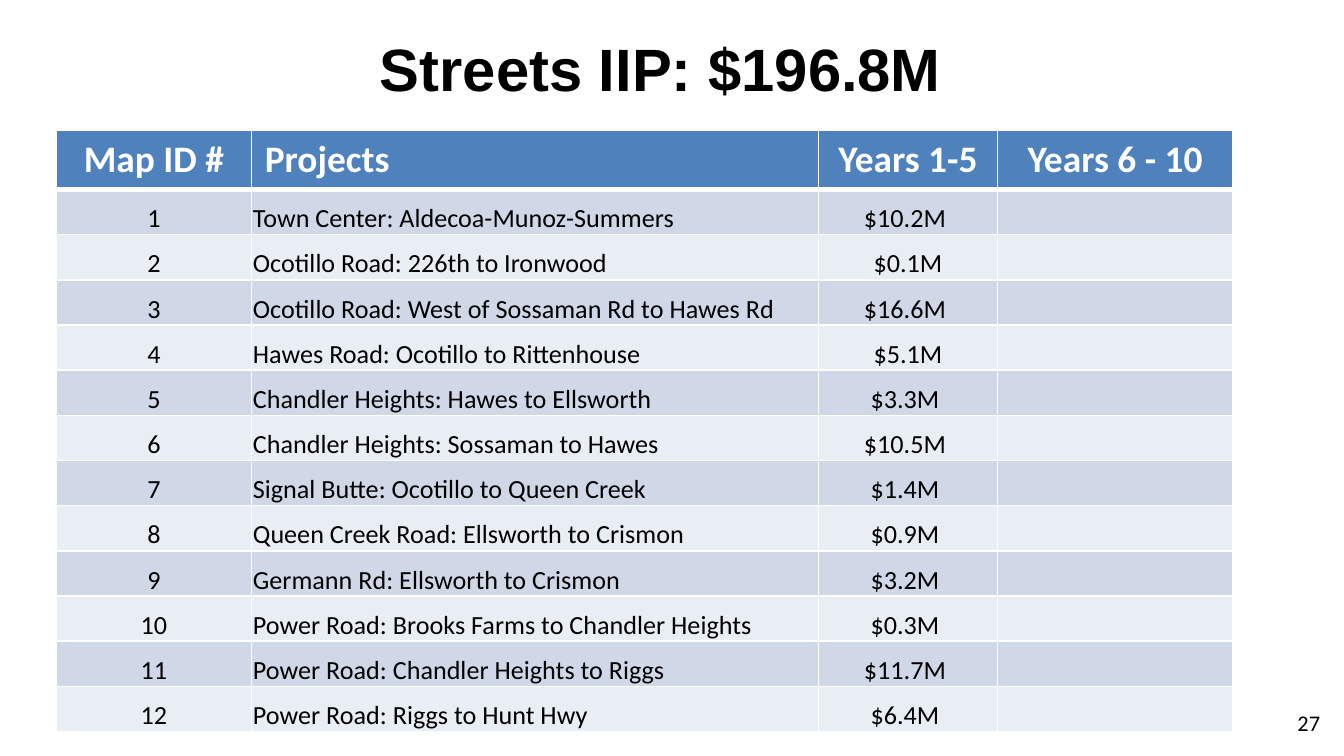
from lxml import etree
from pptx import Presentation
from pptx.dml.color import RGBColor
from pptx.enum import text
from pptx.oxml import ns
from pptx.util import Cm, Pt

TITLE = "Streets IIP: $196.8M"
PAGE = "27"
HEADER = ("Map ID #", "Projects", "Years 1-5", "Years 6 - 10")
PROJECTS = [
    ("Town Center: Aldecoa-Munoz-Summers", "$10.2M "),
    ("Ocotillo Road: 226th to Ironwood", "$0.1M"),
    ("Ocotillo Road: West of Sossaman Rd to Hawes Rd", "$16.6M "),
    ("Hawes Road: Ocotillo to Rittenhouse", "$5.1M"),
    ("Chandler Heights: Hawes to Ellsworth", "$3.3M "),
    ("Chandler Heights: Sossaman to Hawes", "$10.5M "),
    ("Signal Butte: Ocotillo to Queen Creek", "$1.4M "),
    ("Queen Creek Road: Ellsworth to Crismon", "$0.9M "),
    ("Germann Rd: Ellsworth to Crismon", "$3.2M "),
    ("Power Road: Brooks Farms to Chandler Heights", "$0.3M "),
    ("Power Road: Chandler Heights to Riggs", "$11.7M "),
    ("Power Road: Riggs to Hunt Hwy", "$6.4M "),
]
ROWS = [HEADER] + [(str(i), name, cost, "")
                   for i, (name, cost) in enumerate(PROJECTS, 1)]

LEFT, CENTER, RIGHT = (text.PP_ALIGN.LEFT, text.PP_ALIGN.CENTER,
                       text.PP_ALIGN.RIGHT)
ALIGN = (CENTER, LEFT, CENTER, CENTER)
COLUMNS = (3.68, 10.72, 3.38, 4.45)
TABLE_LEFT, TABLE_TOP, TABLE_HEIGHT, HEADER_HEIGHT = 1.07, 2.46, 11.37, 1.12

THEME = {
    "title": {"name": "Arial", "size": Pt(32), "bold": True, "color": "000000"},
    "header": {"name": "Calibri", "size": Pt(20), "bold": True, "color": "FFFFFF"},
    "body": {"name": "Calibri", "size": Pt(14), "bold": False, "color": "000000"},
    "page": {"name": "Calibri", "size": Pt(12), "bold": False, "color": "000000"},
    "header_fill": "4F81BD",
    "bands": ("D0D8E8", "E9EDF4"),
    "border": "FFFFFF",
}
BODY_CELL = {"margin_left": Cm(0.03), "margin_right": Cm(0.03),
             "margin_top": Cm(0.03), "margin_bottom": 0,
             "vertical_anchor": text.MSO_ANCHOR.BOTTOM}


def set_attrs(target, values):
    for name, value in values.items():
        setattr(target, name, value)


def write(tf, words, style, align):
    p = tf.paragraphs[0]
    p.alignment = align
    if not words:
        return
    r = p.add_run()
    r.text = words
    set_attrs(r.font, {k: v for k, v in THEME[style].items() if k != "color"})
    r.font.color.rgb = RGBColor.from_string(THEME[style]["color"])


def set_borders(cell, widths):
    """Put the side lines ahead of the fill, as the schema asks."""
    tc_pr = cell._tc.get_or_add_tcPr()
    for i, (side, width) in enumerate(widths.items()):
        ln = etree.Element(ns.qn(f"a:ln{side}"), w=str(Pt(width)))
        fill = etree.SubElement(ln, ns.qn("a:solidFill"))
        etree.SubElement(fill, ns.qn("a:srgbClr"), val=THEME["border"])
        tc_pr.insert(i, ln)


def add_projects_table(s):
    table = s.shapes.add_table(len(ROWS), len(COLUMNS), Cm(TABLE_LEFT),
                               Cm(TABLE_TOP), Cm(sum(COLUMNS)),
                               Cm(TABLE_HEIGHT)).table
    table.horz_banding = False
    for column, width in zip(table.columns, COLUMNS):
        column.width = Cm(width)
    row_height = (TABLE_HEIGHT - HEADER_HEIGHT) / len(PROJECTS)
    for i, values in enumerate(ROWS):
        is_header = i == 0
        table.rows[i].height = Cm(HEADER_HEIGHT if is_header else row_height)
        color = THEME["header_fill"] if is_header else THEME["bands"][(i - 1) % 2]
        for j, value in enumerate(values):
            cell = table.cell(i, j)
            if not is_header:
                set_attrs(cell, BODY_CELL)
            cell.fill.solid()
            cell.fill.fore_color.rgb = RGBColor.from_string(color)
            set_borders(cell, {"L": 1, "R": 1, "T": 3 if i == 1 else 1,
                               "B": 3 if is_header else 1})
            write(cell.text_frame, value, "header" if is_header else "body",
                  ALIGN[j])


def main():
    prs = Presentation()
    set_attrs(prs, {"slide_width": Cm(25.4), "slide_height": Cm(14.29)})
    s = prs.slides.add_slide(prs.slide_layouts[5])

    title = s.shapes.title
    set_attrs(title, {"left": Cm(0.64), "top": Cm(0.08),
                      "width": Cm(23.7), "height": Cm(2.39)})
    title.text_frame.vertical_anchor = text.MSO_ANCHOR.MIDDLE
    write(title.text_frame, TITLE, "title", CENTER)

    page = s.shapes.add_textbox(Cm(23.93), Cm(13.28), Cm(1.27), Cm(0.76))
    page.text_frame.word_wrap = True
    write(page.text_frame, PAGE, "page", RIGHT)

    add_projects_table(s)
    prs.save("out.pptx")


if __name__ == "__main__":
    main()
